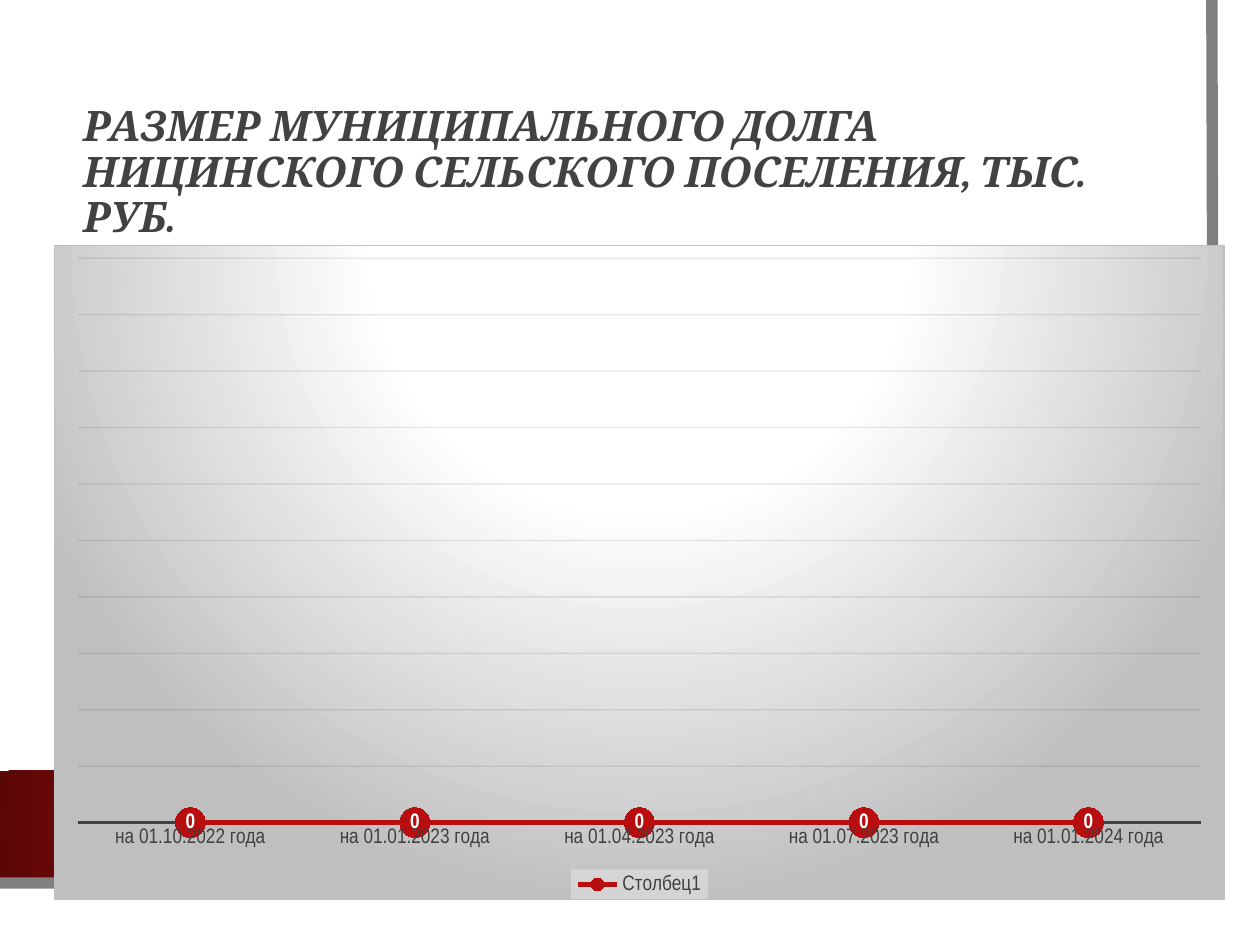
import dataclasses

import pptx
import pptx.chart.data
import pptx.dml.color
import pptx.enum.chart
import pptx.enum.shapes
import pptx.enum.text
import pptx.oxml
import pptx.oxml.ns
import pptx.util

Cm, Pt = pptx.util.Cm, pptx.util.Pt
Enum = pptx.enum.chart
tag = pptx.oxml.ns.qn


@dataclasses.dataclass(frozen=True)
class Theme:
    """Colours, fonts and type sizes of the deck."""
    white: str = "FFFFFF"
    red: str = "B80E0F"
    wine: str = "5C0707"
    grey: str = "808080"
    pale: str = "BFBFBF"
    mist: str = "F2F2F2"
    head: str = "424242"
    ink: str = "404040"
    black: str = "000000"
    grid: str = "0D0D0D"
    serif: str = "Cambria"
    sans: str = "Arial Narrow"
    big: int = 24
    mid: int = 12
    small: int = 10


LOOK = Theme()
TITLE = "РАЗМЕР МУНИЦИПАЛЬНОГО ДОЛГА НИЦИНСКОГО СЕЛЬСКОГО ПОСЕЛЕНИЯ, ТЫС. РУБ."
DATES = ("01.10.2022", "01.01.2023", "01.04.2023", "01.07.2023", "01.01.2024")
DEBT = (0, 0, 0, 0, 0)


def put(item, **vals):
    """Set each named value on the item."""
    for key, val in vals.items():
        setattr(item, key, val)


def tint(code):
    """Turn a hex code into a colour."""
    return pptx.dml.color.RGBColor.from_string(code)


def type_up(font, size, code, name=LOOK.sans, **more):
    """Format a font."""
    put(font, size=Pt(size), name=name, **more)
    font.color.rgb = tint(code)


def rule(line, code, width):
    """Format a line."""
    line.color.rgb = tint(code)
    line.width = Pt(width)


def paint(fill, code):
    """Give a fill one plain colour."""
    fill.solid()
    fill.fore_color.rgb = tint(code)


def glow(stops, top, base):
    """Return the XML of a round gradient."""
    marks = "".join(
        f'<a:gs pos="{spot * 1000}"><a:srgbClr val="{code}"/></a:gs>'
        for spot, code in stops)
    return (f'<a:gradFill {pptx.oxml.ns.nsdecls("a")}><a:gsLst>{marks}</a:gsLst>'
            f'<a:path path="circle"><a:fillToRect l="50000" t="{top * 1000}" '
            f'r="50000" b="{base * 1000}"/></a:path></a:gradFill>')


def back(node, fill, line):
    """Put a fill and a line behind a chart part that has text settings."""
    part = pptx.oxml.parse_xml(
        f'<c:spPr {pptx.oxml.ns.nsdecls("c", "a")}>{fill}{line}</c:spPr>')
    node.find(tag("c:txPr")).addprevious(part)


def add_frame(slide, box):
    """Draw the white card, the red strip and the grey edge."""
    left, top, wide, high = box
    shapes = slide.shapes
    rect = pptx.enum.shapes.MSO_SHAPE.RECTANGLE
    card = shapes.add_shape(rect, Cm(left), Cm(top), Cm(wide), Cm(high))
    strip = shapes.add_shape(
        rect, Cm(left), Cm(top + 15.54), Cm(wide - 0.59), Cm(2.16))
    for shape, code in ((card, LOOK.white), (strip, LOOK.red)):
        shape.shadow.inherit = False
        paint(shape.fill, code)
        shape.line.fill.background()
    solid = strip.element.spPr.find(tag("a:solidFill"))
    stops = ((34, LOOK.red), (100, LOOK.wine))
    solid.getparent().replace(solid, pptx.oxml.parse_xml(glow(stops, 50, 50)))

    pen = shapes.build_freeform(Cm(left + wide - 0.54), Cm(top))
    pen.add_line_segments(
        [(Cm(left + wide - 0.49), Cm(top + 17.83)), (Cm(left), Cm(top + 17.8))],
        close=False)
    edge = pen.convert_to_shape()
    edge.shadow.inherit = False
    edge.fill.background()
    rule(edge.line, LOOK.grey, 6.5)


def add_title(slide, box):
    """Place and format the title in front of the frame."""
    title = slide.shapes.title
    left, top, wide, high = map(Cm, box)
    put(title, left=left, top=top, width=wide, height=high)
    title.element.getparent().append(title.element)
    frame = title.text_frame
    frame.text = TITLE
    put(frame, word_wrap=True, auto_size=pptx.enum.text.MSO_AUTO_SIZE.NONE,
        vertical_anchor=pptx.enum.text.MSO_ANCHOR.MIDDLE)
    para = frame.paragraphs[0]
    put(para, alignment=pptx.enum.text.PP_ALIGN.LEFT, line_spacing=0.9)
    type_up(para.runs[0].font, LOOK.big, LOOK.head, LOOK.serif,
            bold=True, italic=True)


def add_debt(slide, box):
    """Draw the line chart of the debt."""
    data = pptx.chart.data.CategoryChartData()
    data.categories = [f"на {date} года" for date in DATES]
    data.add_series("Столбец1", DEBT)
    chart = slide.shapes.add_chart(
        Enum.XL_CHART_TYPE.LINE_MARKERS, *map(Cm, box), data).chart
    put(chart, has_title=False, has_legend=True)
    type_up(chart.font, LOOK.small, LOOK.black)
    root = chart.element
    stops = ((0, LOOK.white), (39, LOOK.white), (100, LOOK.pale))
    back(root, glow(stops, -80, 180),
         f'<a:ln w="{Pt(0.75)}"><a:solidFill><a:srgbClr val="{LOOK.pale}"/>'
         '</a:solidFill></a:ln>')

    legend = chart.legend
    put(legend, position=Enum.XL_LEGEND_POSITION.BOTTOM, include_in_layout=False)
    type_up(legend.font, LOOK.mid, LOOK.ink)
    back(next(root.iter(tag("c:legend"))),
         f'<a:solidFill><a:srgbClr val="{LOOK.mist}"><a:alpha val="39000"/>'
         '</a:srgbClr></a:solidFill>', '<a:ln><a:noFill/></a:ln>')

    dates, sums = chart.category_axis, chart.value_axis
    none = Enum.XL_TICK_MARK.NONE
    put(dates, major_tick_mark=none, minor_tick_mark=none)
    type_up(dates.tick_labels.font, LOOK.mid, LOOK.ink)
    rule(dates.format.line, LOOK.ink, 1.5)
    put(sums, visible=False, has_major_gridlines=True,
        minimum_scale=0, maximum_scale=1, major_unit=0.1)
    rule(sums.major_gridlines.format.line, LOOK.grid, 0.75)
    grid = next(root.iter(tag("c:majorGridlines")))
    next(grid.iter(tag("a:srgbClr"))).append(pptx.oxml.parse_xml(
        f'<a:alpha {pptx.oxml.ns.nsdecls("a")} val="10000"/>'))

    plot = chart.plots[0]
    plot.vary_by_categories = False
    debt = plot.series[0]
    debt.smooth = False
    rule(debt.format.line, LOOK.red, 2.5)
    put(debt.marker, style=Enum.XL_MARKER_STYLE.CIRCLE, size=17)
    paint(debt.marker.format.fill, LOOK.red)
    debt.marker.format.line.fill.background()
    labels = debt.data_labels
    put(labels, show_value=True, position=Enum.XL_LABEL_POSITION.CENTER)
    type_up(labels.font, LOOK.mid, LOOK.white, bold=True)


def main():
    """Build the slide and save it."""
    deck = pptx.Presentation()
    put(deck, slide_width=Cm(25.4), slide_height=Cm(19.05))
    slide = deck.slides.add_slide(deck.slide_layouts.get_by_name("Title Only"))
    paint(slide.background.fill, LOOK.white)
    add_frame(slide, (0, 0, 24.97, 18.47))
    add_title(slide, (1.42, 1.9, 21.67, 3.2))
    add_debt(slide, (1.09, 4.93, 23.6, 13.21))
    deck.save("out.pptx")


if __name__ == "__main__":
    main()
